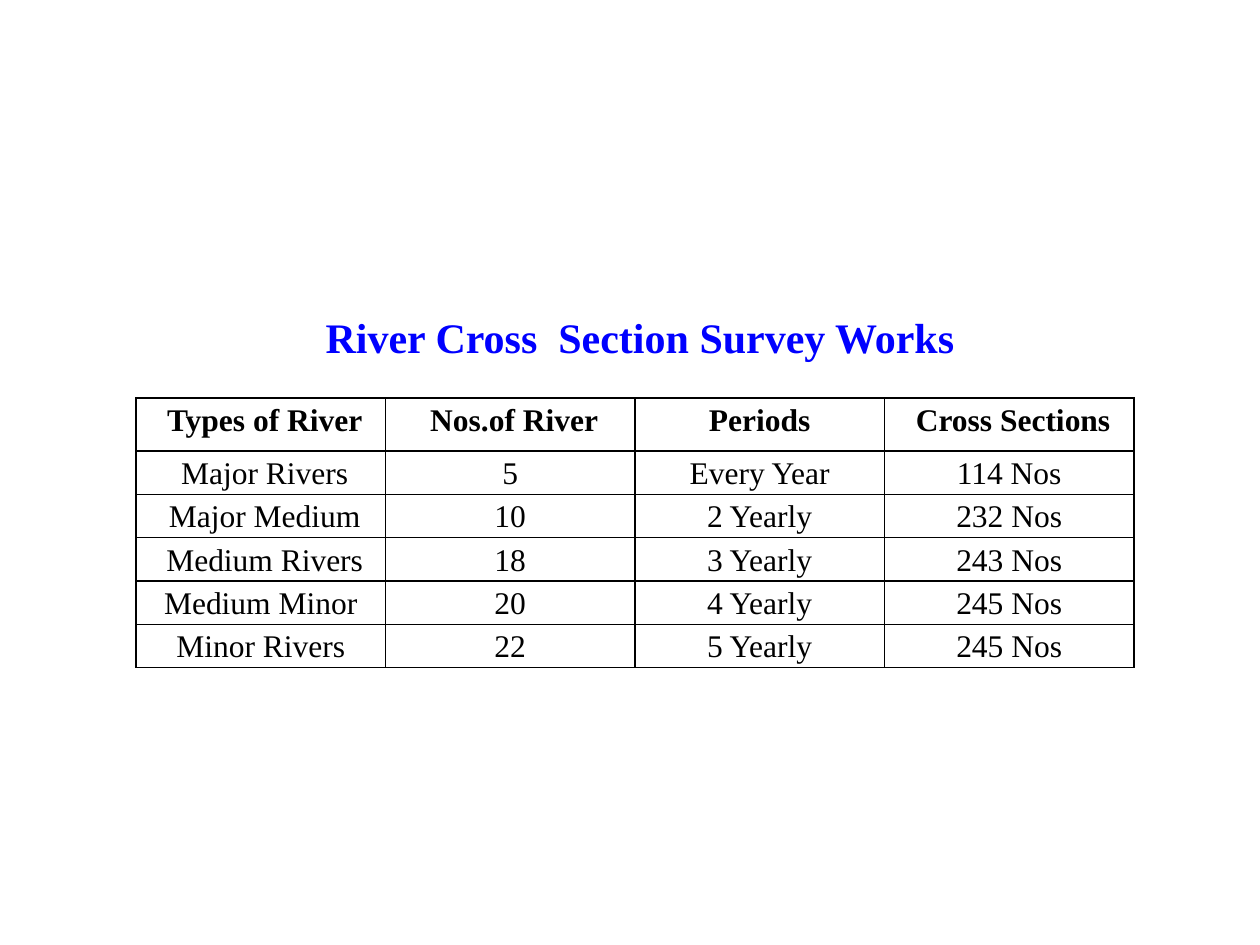
import pptx
import pptx.dml.color
import pptx.enum.text
import pptx.oxml
import pptx.oxml.ns
import pptx.util

PX = 914400 // 126
CENTER = pptx.enum.text.PP_ALIGN.CENTER


def style(paragraph, size, color, bold):
    paragraph.alignment = CENTER
    paragraph.font.name = "Times New Roman"
    paragraph.font.size = pptx.util.Pt(size)
    paragraph.font.bold = bold
    paragraph.font.color.rgb = pptx.dml.color.RGBColor.from_string(color)


def add_borders(cell, color):
    """Draw a 1 pt line on all four sides of the cell."""
    properties = cell._tc.get_or_add_tcPr()
    for position, side in enumerate(("lnL", "lnR", "lnT", "lnB")):
        properties.insert(position, pptx.oxml.parse_xml(
            f'<a:{side} {pptx.oxml.ns.nsdecls("a")} w="12700">'
            f'<a:solidFill><a:srgbClr val="{color}"/></a:solidFill></a:{side}>'))


presentation = pptx.Presentation()
presentation.slide_width = 1260 * PX
presentation.slide_height = 945 * PX
slide = presentation.slides.add_slide(presentation.slide_layouts[6])

survey = [
    ("Types of River", "Nos.of River", "Periods", "Cross Sections"),
    ("Major Rivers", "5", "Every Year", "114 Nos"),
    ("Major Medium", "10", "2 Yearly", "232 Nos"),
    ("Medium Rivers", "18", "3 Yearly", "243 Nos"),
    ("Medium Minor", "20", "4 Yearly", "245 Nos"),
    ("Minor Rivers", "22", "5 Yearly", "245 Nos"),
]
# These labels sit slightly right of the column centre.
shifted = {"Types of River", "Nos.of River", "Cross Sections",
           "Major Rivers", "Major Medium", "Medium Rivers"}

table_height, header_height = 270, 53
river_table = slide.shapes.add_table(
    len(survey), len(survey[0]), 136 * PX, 398 * PX, 998 * PX, table_height * PX).table
river_table.horz_banding = False

for row_number, labels in enumerate(survey):
    is_header = row_number == 0
    river_table.rows[row_number].height = (
        header_height * PX if is_header
        else (table_height - header_height) * PX // (len(survey) - 1))
    for column_number, label in enumerate(labels):
        cell = river_table.cell(row_number, column_number)
        cell.margin_left = (17 if label in shifted else 9) * PX
        cell.margin_right = 9 * PX
        cell.margin_top = cell.margin_bottom = 0
        cell.fill.background()
        add_borders(cell, "000000")
        cell.text = label
        paragraph = cell.text_frame.paragraphs[0]
        paragraph.line_spacing = 1.15
        style(paragraph, 18, "000000", is_header)

title = slide.shapes.add_textbox(199 * PX, 305 * PX, 882 * PX, 63 * PX).text_frame
title.word_wrap = True
title.text = "River Cross  Section Survey Works"
style(title.paragraphs[0], 24, "0000FF", True)

presentation.save("out.pptx")
